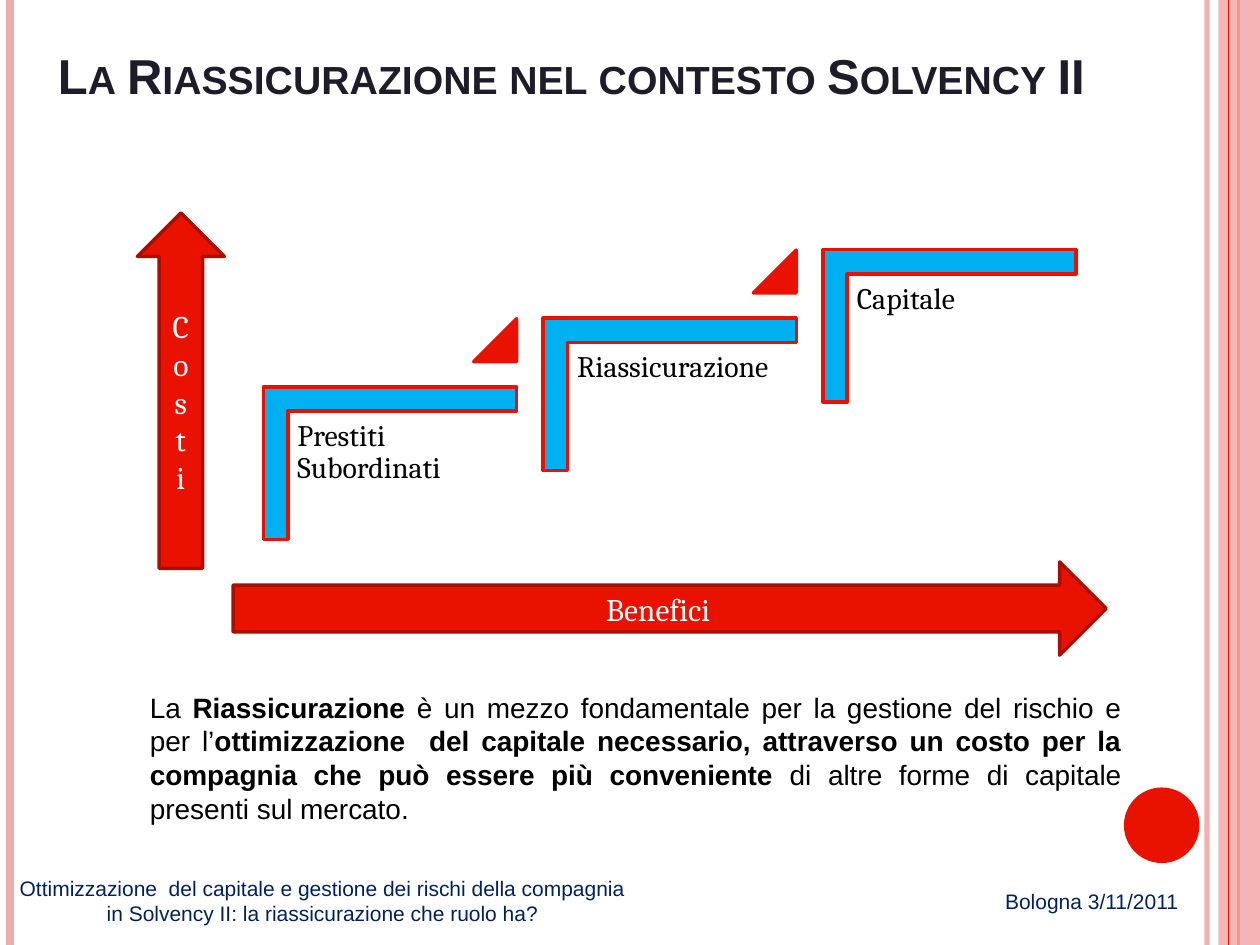
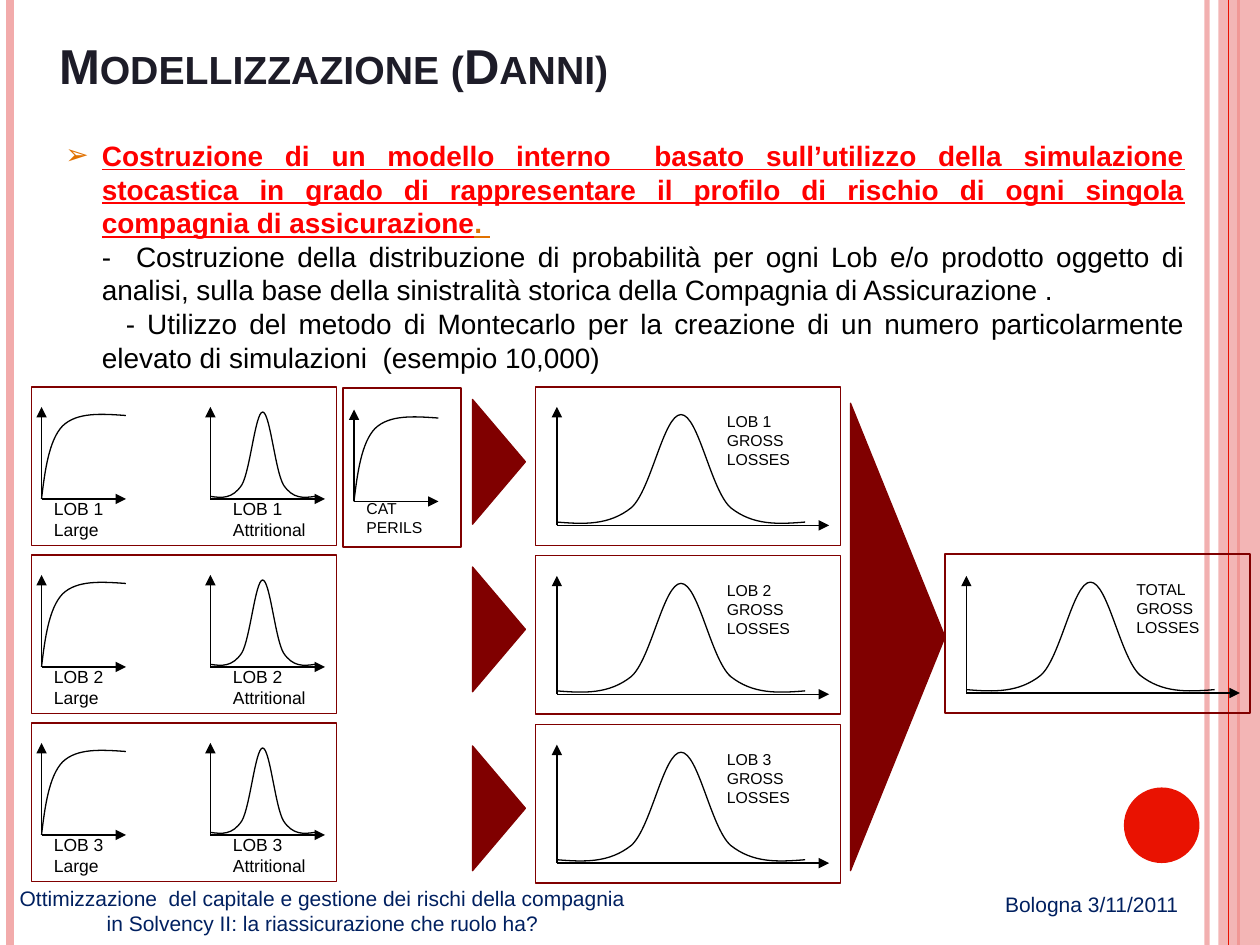
from lxml import etree
from pptx import Presentation
from pptx.dml.color import RGBColor
from pptx.enum.shapes import MSO_CONNECTOR, MSO_SHAPE
from pptx.enum.text import MSO_ANCHOR, PP_ALIGN
from pptx.oxml.ns import qn
from pptx.util import Inches, Pt

RED = RGBColor(0xE9, 0x12, 0x01)
DARK_RED = RGBColor(0xAC, 0x0D, 0x01)
PURE_RED = RGBColor(0xFF, 0x00, 0x00)
PINK = RGBColor(0xF2, 0xAB, 0xAB)
MAROON = RGBColor(0x80, 0x00, 0x00)
ORANGE = RGBColor(0xE1, 0x71, 0x00)
SKY = RGBColor(0x00, 0xB0, 0xF0)
NAVY = RGBColor(0x00, 0x20, 0x60)
INK = RGBColor(0x1D, 0x1C, 0x28)
BLACK = RGBColor(0x00, 0x00, 0x00)
WHITE = RGBColor(0xFF, 0xFF, 0xFF)

STRAIGHT = MSO_CONNECTOR.STRAIGHT
RECTANGLE, ELLIPSE = MSO_SHAPE.RECTANGLE, MSO_SHAPE.OVAL
UP_ARROW, RIGHT_ARROW = MSO_SHAPE.UP_ARROW, MSO_SHAPE.RIGHT_ARROW
CORNER, TRIANGLE = MSO_SHAPE.CORNER, MSO_SHAPE.ISOSCELES_TRIANGLE
LEFT, CENTER, JUSTIFY = PP_ALIGN.LEFT, PP_ALIGN.CENTER, PP_ALIGN.JUSTIFY
TOP, MIDDLE, BOTTOM = MSO_ANCHOR.TOP, MSO_ANCHOR.MIDDLE, MSO_ANCHOR.BOTTOM


def write(page, text, at=None, shape=None, size=16, font="Arial", color=BLACK,
          bold=False, underline=False, small_caps=False, align=LEFT, anchor=TOP,
          inset=None, spacing=None):
    """Write paragraphs split at line ends; asterisks switch bold on and off."""
    if shape is None:
        shape = page.shapes.add_textbox(*map(Inches, at))
    frame = shape.text_frame
    frame.word_wrap = True
    frame.vertical_anchor = anchor
    if inset is not None:
        frame.margin_left = frame.margin_right = Inches(inset)
        frame.margin_top = frame.margin_bottom = Inches(inset)
    for line in text.split("\n"):
        para = frame.paragraphs[-1]
        if para.runs:
            para = frame.add_paragraph()
        para.alignment = align
        if spacing:
            para.line_spacing = spacing
        for number, part in enumerate(line.split("*")):
            span = para.add_run()
            span.text = part
            span.font.size = Pt(size)
            span.font.name = font
            span.font.color.rgb = color
            span.font.bold = bold or number % 2 == 1
            span.font.underline = underline
            if small_caps:
                span.font._element.set("cap", "small")
    return shape


def draw(page, kind, left, top, width, height, fill=None, line=None, weight=1,
         adjust=(), arrow=False):
    """Draw a preset shape, or a straight line when kind is None."""
    if kind is None:
        shape = page.shapes.add_connector(STRAIGHT, *map(
            Inches, (left, top, left + width, top + height)))
    else:
        shape = page.shapes.add_shape(kind, *map(Inches, (left, top, width, height)))
        shape.shadow.inherit = False
        for index, value in enumerate(adjust):
            shape.adjustments[index] = value
        if fill is None:
            shape.fill.background()
        else:
            shape.fill.solid()
            shape.fill.fore_color.rgb = fill
    if line is None:
        shape.line.fill.background()
    else:
        shape.line.color.rgb = line
        shape.line.width = Pt(weight)
    if kind is None:
        properties = shape._element.spPr
        if arrow:
            etree.SubElement(properties.find(qn("a:ln")), qn("a:tailEnd"), type="triangle")
        etree.SubElement(properties, qn("a:effectLst"))
    return shape


deck = Presentation()
deck.slide_width, deck.slide_height = Inches(10), Inches(7.5)

# Shared frame: side lines, band, dot, title and footers
titles = [
    # text, title place, title inset, footer top, date top
    ("La Riassicurazione nel contesto Solvency II", (0.46, -0.42, 8.75, 1.25), 0, 6.9, 7),
    ("Modellizzazione (Danni)", (0.37, 0, 8.92, 0.8), None, 6.98, 7.03),
]
for title, place, inset, footer_top, date_top in titles:
    page = deck.slides.add_slide(deck.slide_layouts[6])
    edge = draw(page, None, 9.58, 0, 0, 7.5, line=PINK, weight=3)
    draw(page, None, 0.08, 0, 0, 7.5, line=PINK, weight=4.5)
    draw(page, None, 9.83, 0, 0, 7.5, line=RED, weight=1.5)
    band = draw(page, RECTANGLE, 9.67, 0, 0.33, 7.5, fill=PINK)
    for shape, opacity in ((edge, 93000), (band, 87000)):
        tint = shape._element.xpath("./p:spPr//a:srgbClr")[0]
        etree.SubElement(tint, qn("a:alpha"), val=str(opacity))
    draw(page, None, 9.75, 0, 0, 7.5, line=RED, weight=0.75)
    draw(page, ELLIPSE, 8.92, 6.25, 0.6, 0.6, fill=RED)
    write(page, title, place, size=28, color=INK, bold=True, small_caps=True,
          anchor=BOTTOM, inset=inset)
    write(page, "Ottimizzazione  del capitale e gestione dei rischi della compagnia "
          "in Solvency II: la riassicurazione che ruolo ha?",
          (0, footer_top, 5.12, 0.71), size=12, color=NAVY, align=CENTER)
    write(page, "Bologna 3/11/2011", (7.6, date_top, 2.13, 0.5),
          size=12, color=NAVY, align=CENTER)
steps_page, model_page = deck.slides

# Slide 1: conclusion
write(steps_page, "La *Riassicurazione* è un mezzo fondamentale per la gestione del "
      "rischio e per l’*ottimizzazione  del capitale necessario, attraverso un costo "
      "per la compagnia che può essere più conveniente* di altre forme di capitale "
      "presenti sul mercato.", (1.09, 5.43, 7.91, 1.17), align=JUSTIFY)

# Slide 1: cost and benefit arrows
for kind, place, label in (
    (UP_ARROW, (1.09, 1.69, 0.69, 2.82), "Cost\ni"),
    (RIGHT_ARROW, (1.85, 4.46, 6.93, 0.74), "Benefici"),
):
    arrow = draw(steps_page, kind, *place, fill=RED, line=DARK_RED, weight=2)
    write(steps_page, label, shape=arrow, size=18, font="Cambria", color=WHITE,
          align=CENTER, anchor=MIDDLE)

# Slide 1: rising steps, with a triangle between neighbours
steps = ["Prestiti Subordinati", "Riassicurazione", "Capitale"]
for number, label in enumerate(steps):
    left, top = 2.29 + 2.22 * number, 3.27 - 1.09 * number / 2
    corner = draw(steps_page, CORNER, left + 0.2, top - 0.6, 1.21, 2.01,
                  fill=SKY, line=RED, weight=2, adjust=(0.16, 0.16))
    corner.rotation = 90
    write(steps_page, label, (left, top, 1.81, 1.59), size=17, font="Cambria",
          inset=0.07, spacing=0.9)
    if number < len(steps) - 1:
        draw(steps_page, TRIANGLE, left + 1.47, top - 0.74, 0.34, 0.34,
             fill=RED, line=RED, weight=2, adjust=(1,))

# Slide 2: description of the model
body = write(model_page, "Costruzione di un modello interno  basato sull’utilizzo della "
             "simulazione stocastica in grado di rappresentare il profilo di rischio di "
             "ogni singola compagnia di assicurazione", (0.42, 0.75, 9.08, 5.67),
             color=PURE_RED, bold=True, underline=True, align=JUSTIFY)
body.text_frame.margin_top = Inches(0.35)
heading = body.text_frame.paragraphs[0]
stop = heading.add_run()
stop.text = ". "
stop.font.size, stop.font.name = Pt(16), "Arial"
stop.font.bold = stop.font.underline = True
stop.font.color.rgb = ORANGE
write(model_page, "-  Costruzione della distribuzione di probabilità per ogni Lob e/o "
      "prodotto oggetto di analisi, sulla base della sinistralità storica della Compagnia "
      "di Assicurazione .\n- Utilizzo del metodo di Montecarlo per la creazione di un "
      "numero particolarmente elevato di simulazioni  (esempio 10,000)",
      shape=body, align=JUSTIFY)
for para, indent in zip(body.text_frame.paragraphs, (-0.29, 0, 0.19)):
    properties = para._p.get_or_add_pPr()
    properties.set("marL", str(Inches(0.29)))
    properties.set("indent", str(Inches(indent)))
properties = heading._p.get_or_add_pPr()
bullet_color = etree.SubElement(properties, qn("a:buClr"))
etree.SubElement(bullet_color, qn("a:srgbClr"), val=str(ORANGE))
etree.SubElement(properties, qn("a:buFont"), typeface="Arial")
etree.SubElement(properties, qn("a:buChar"), char="➢")

# Bezier control points in a unit square, measured up from the axis
GROWTH = [(0, 0), (0.04, 0.33), (0.09, 0.68), (0.25, 0.84), (0.42, 1), (0.71, 0.98), (1, 0.96)]
RISE = [(0, 0.03), (0.11, 0.01), (0.21, 0), (0.3, 0.16), (0.38, 0.32), (0.43, 1), (0.5, 1)]
BELL = RISE + [(1 - x, y) for x, y in reversed(RISE[:-1])]

# Slide 2: list the panels, graphs and labels
panels = [(2.72, 3.08, 0.94), (7.5, 4.4, 2.42)]  # left, top, width
graphs = [  # curve, left, base, axis width and height, curve width and height
    (GROWTH, 2.81, 3.98, 0.67, 0.73, 0.67, 0.69),
    (BELL, 7.67, 5.5, 2.17, 0.93, 1.97, 0.88),
]
labels = [  # text, left, top, width, height, size
    ("CAT PERILS", 2.81, 3.91, 0.75, 0.4, 9),
    ("TOTAL GROSS LOSSES", 8.92, 4.55, 0.92, 0.55, 9),
]
for row in range(3):
    name = f"LOB {row + 1}"
    base = 3.96 + 4 * row / 3
    gross_base = 4.17 + 1.34 * row
    panels += [(0.25, base - 0.89, 2.42), (4.25, gross_base - 1.1, 2.42)]
    graphs += [
        (GROWTH, 0.33, base, 0.67, 0.73, 0.67, 0.69),
        (BELL, 1.67, base, 0.91, 0.73, 0.83, 0.69),
        (BELL, 4.42, gross_base, 2.16, 0.94, 1.97, 0.88),
    ]
    labels += [
        (f"{name} Large", 0.33, base - 0.06, 0.75, 0.43, 10),
        (f"{name} Attritional", 1.75, base - 0.06, 0.92, 0.43, 10),
        (f"{name} GROSS LOSSES", 5.67, gross_base - 0.95, 0.92, 0.55, 9),
    ]

# Slide 2: flow arrows
for left, top, width, height in (
    (3.75, 3.17, 0.42, 0.99), (3.75, 4.5, 0.42, 0.99),
    (3.75, 5.92, 0.42, 0.99), (6.75, 3.2, 0.75, 3.71),
):
    draw(model_page, RIGHT_ARROW, left, top, width, height,
         fill=MAROON, line=MAROON, weight=0.75, adjust=(1, 1))

# Slide 2: axes and curves
for curve, left, base, axis_width, axis_height, width, height in graphs:
    for across, up in ((0, axis_height), (axis_width, 0)):
        draw(model_page, None, left, base, across, -up, line=BLACK, weight=0.75, arrow=True)
    points = [(Inches(left + x * width), Inches(base - y * height)) for x, y in curve]
    builder = model_page.shapes.build_freeform(*points[0])
    builder.add_line_segments(points[1:], close=False)
    outline = builder.convert_to_shape()
    outline.shadow.inherit = False
    outline.fill.background()
    outline.line.color.rgb = BLACK
    outline.line.width = Pt(0.75)
    # Join every three line segments into one Bezier segment
    segments = outline._element.xpath(".//a:lnTo")
    for start in range(0, len(segments), 3):
        bezier = etree.Element(qn("a:cubicBezTo"))
        segments[start].addprevious(bezier)
        for segment in segments[start:start + 3]:
            bezier.append(segment[0])
            segment.getparent().remove(segment)

# Slide 2: labels and panel borders
for label, left, top, width, height, size in labels:
    write(model_page, label, (left, top, width, height), size=size)
for left, top, width in panels:
    draw(model_page, RECTANGLE, left, top, width, 1.26, line=MAROON)

deck.save("out.pptx")
